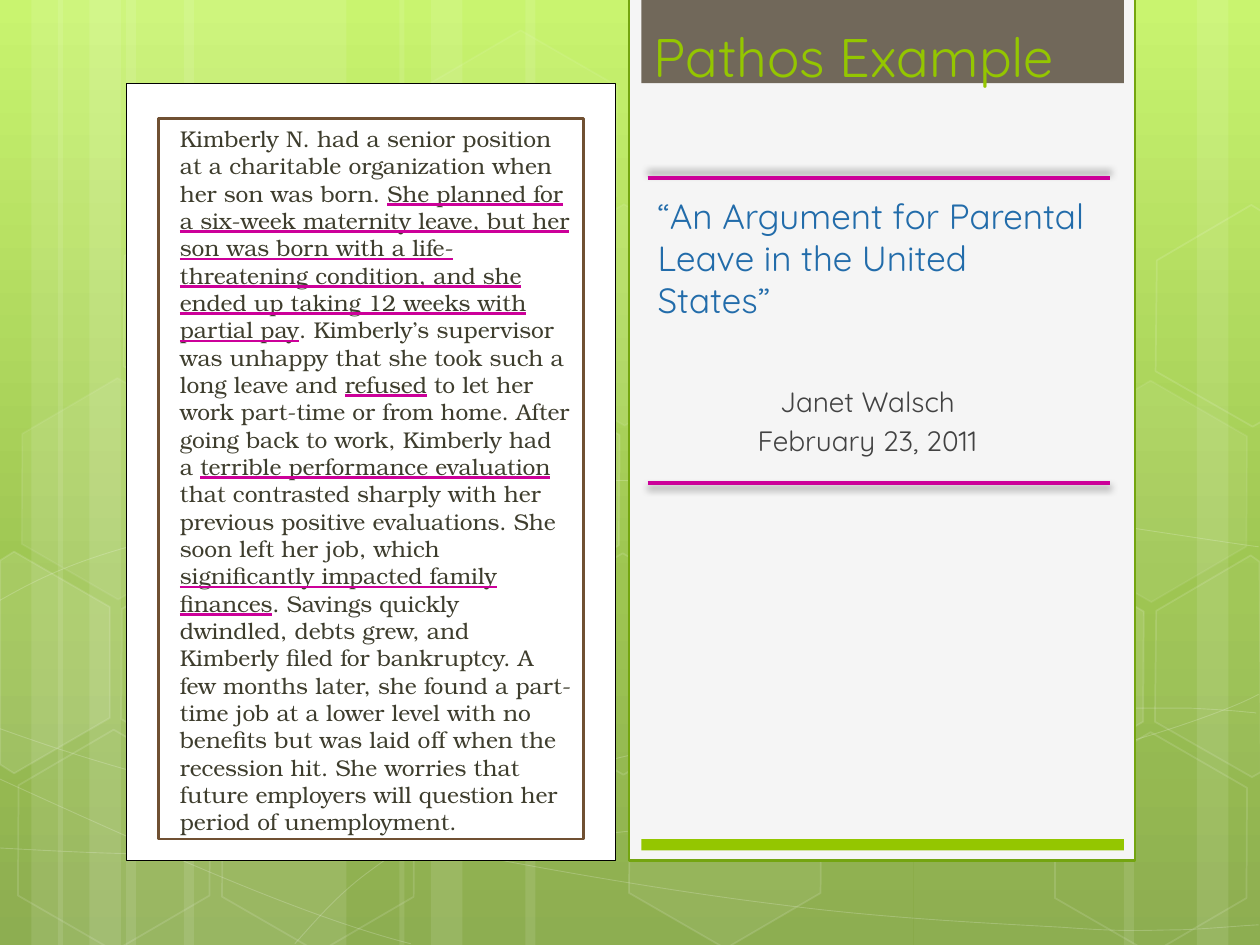
"""Build the Pathos Example slide: a quoted passage beside its source panel."""
import math

from lxml import etree
from pptx import Presentation
from pptx import util as u
from pptx.dml.color import RGBColor
from pptx.enum import shapes, text
from pptx.oxml.ns import qn

COLOURS = {
    "white": "FFFFFF", "black": "000000", "panel": "F5F5F5", "panel edge": "74A510",
    "taupe": "71685A", "lime": "94C600", "brown": "705032", "passage": "3E3D2D",
    "blue": "226CAA", "grey": "424242", "magenta": "CC0099",
}
WIDTH, HEIGHT = 10, 7.5
SERIF, SANS = "TeX Gyre Bonum", "Quicksand"
BACKGROUND = [(0, "C3F35F"), (62, "93BF3F"), (100, "81A53E")]
TILT = 30

STRIPES = [(1, 1.75), (0, 0.5), (0.25, 0.83), (1.46, 1.75), (0.46, 0.5), (0.71, 0.83),
           (7.25, 1.75), (9.5, 0.5), (8.92, 0.83), (4.17, 3.08), (3.17, 0.5), (3.42, 0.83)]

CURVES = [
    [(-0.01, 6.73), (0.53, 6.76), (1.07, 6.79), (1.82, 6.78), (2.57, 6.77), (3.49, 6.75),
     (4.49, 6.65), (5.5, 6.55), (6.92, 6.36), (7.83, 6.17), (8.75, 5.98), (9.68, 5.68), (9.99, 5.51)],
    [(-0.01, 4.77), (0.27, 4.61), (0.56, 4.46), (1.13, 4.31), (1.7, 4.16), (2.5, 3.94),
     (3.39, 3.87), (4.28, 3.8), (5.35, 3.79), (6.45, 3.87), (7.55, 3.95), (9.39, 4.26), (9.99, 4.34)],
    [(-0.03, 6.17), (1.18, 6.72), (2.39, 7.27), (3.26, 7.49)],
    [(-0.01, 5.78), (0.3, 5.89), (0.61, 6), (1.19, 6.16), (1.78, 6.31), (2.65, 6.56),
     (3.48, 6.73), (4.31, 6.9), (5.37, 7.08), (6.19, 7.18), (7.02, 7.29), (7.91, 7.33),
     (8.44, 7.36), (8.97, 7.4), (9.11, 7.38), (9.36, 7.38), (9.62, 7.37), (9.8, 7.35), (9.99, 7.34)],
    [(2.34, 7.49), (2.52, 7.29), (2.69, 7.09), (2.94, 6.91), (3.18, 6.73), (3.51, 6.53),
     (3.79, 6.39), (4.07, 6.25), (4.24, 6.19), (4.61, 6.09), (4.98, 5.99), (5.65, 5.85),
     (6, 5.78), (6.35, 5.71), (6.4, 5.71), (6.71, 5.69), (7.02, 5.66), (7.51, 5.63),
     (7.86, 5.62), (8.2, 5.61), (8.78, 5.62), (8.78, 5.62), (9, 5.62), (9.22, 5.62),
     (9.44, 5.62), (9.63, 5.63), (9.79, 5.64), (9.88, 5.65), (9.97, 5.66), (9.94, 5.65), (9.97, 5.66)],
]

HEXAGONS = [
    (3.28, 3.13, 10, 12), (4.07, 4.51, 0, 12), (4.08, 1.74, 7, 8), (3.26, 0.36, 4, 8),
    (4.88, 5.89, 6, 12), (0.03, 5.91, 0, 12), (0.06, 3.12, 7, 8), (0.85, 4.51, 0, 12),
    (1.65, 5.92, 0, 12), (0.87, 1.71, 0, 12), (7.44, 4.53, 10, 12), (8.26, 5.93, 0, 12),
    (8.26, 3.14, 7, 8),
]
CUT_HEXAGONS = [
    ((0.27, 5.35), [(0, 4.45), (0.11, 4.38), (0.87, 4.82), (0.87, 5.7), (0.11, 6.14), (0, 6.07)], 10),
    ((9.76, 5.2), [(9.18, 4.85), (9.93, 4.41), (10, 4.46), (10.01, 6.13), (9.94, 6.17), (9.17, 5.73)], 4),
    ((9.76, 2.41), [(9.18, 2.07), (9.93, 1.63), (10.01, 1.68), (10.01, 3.35), (9.94, 3.39), (9.17, 2.95)], 0),
]

PANELS = [
    ((4.99, -0.02, 4.02, 6.85), "panel", "panel edge", 1.25),
    ((5.09, -0.02, 3.83, 0.68), "taupe", None, 0),
    ((1, 0.66, 3.88, 6.17), "white", "black", 0.25),
    ((5.09, 6.66, 3.83, 0.09), "lime", None, 0),
    ((1.26, 0.94, 3.37, 5.72), None, "brown", 1.5),
]

PASSAGE = [
    ("Kimberly N. had a senior position at a charitable organization when her son was born. ", False),
    ("She planned for a six-week maternity leave, but her son was born with a life-threatening "
     "condition, and she ended up taking 12 weeks with partial pay", True),
    (". Kimberly’s supervisor was unhappy that she took such a long leave and ", False),
    ("refused", True),
    (" to let her work part-time or from home. After going back to work, Kimberly had a ", False),
    ("terrible performance evaluation ", True),
    ("that contrasted sharply with her previous positive evaluations. She soon left her job, which ", False),
    ("significantly impacted family finances", True),
    (". Savings quickly dwindled, debts grew, and Kimberly filed for bankruptcy. A few months later, "
     "she found a part-time job at a lower level with no benefits but was laid off when the recession "
     "hit. She worries that future employers will question her period of unemployment.", False),
]
LEFT, CENTRE = text.PP_ALIGN.LEFT, text.PP_ALIGN.CENTER
TOP, BOTTOM = text.MSO_ANCHOR.TOP, text.MSO_ANCHOR.BOTTOM
LABELS = [
    ((5.12, 1.26, 3.61, 1.33), ["“An Argument for Parental Leave in the United States”"], 20, "blue", LEFT, BOTTOM),
    ((5.08, 3, 3.61, 1.66), ["Janet Walsch", "February 23, 2011"], 16, "grey", CENTRE, TOP),
    ((5.09, 0, 3.83, 0.75), ["Pathos Example"], 31, "lime", LEFT, BOTTOM),
]
RULES = [(3.83, 90), (1.41, 270)]


def rgb(name):
    return RGBColor.from_string(COLOURS[name])


def add_node(parent, tag, **attributes):
    return etree.SubElement(parent, qn(tag), {key: str(value) for key, value in attributes.items()})


def fade(parent, percent):
    if percent < 100:
        add_node(parent.find(qn("a:solidFill"))[0], "a:alpha", val=percent * 1000)


def style(shape, fill=None, line=None, weight=0, fill_alpha=100, line_alpha=100):
    shape.shadow.inherit = False
    properties = shape.element.spPr
    if fill:
        shape.fill.solid()
        shape.fill.fore_color.rgb = rgb(fill)
        fade(properties, fill_alpha)
    else:
        shape.fill.background()
    if line:
        shape.line.color.rgb = rgb(line)
        shape.line.width = u.Pt(weight)
        fade(properties.find(qn("a:ln")), line_alpha)
    else:
        shape.line.fill.background()


def add_preset(canvas, kind, place, **look):
    shape = canvas.shapes.add_shape(kind, *map(u.Inches, place))
    style(shape, **look)
    return shape


def add_outline(canvas, points, closed, **look):
    points = [(u.Inches(x), u.Inches(y)) for x, y in points]
    builder = canvas.shapes.build_freeform(*points[0], scale=1.0)
    builder.add_line_segments(points[1:], close=closed)
    shape = builder.convert_to_shape()
    style(shape, **look)
    return shape


def bend(shape):
    outline = next(shape.element.iter(qn("a:path")))
    segments = outline.findall(qn("a:lnTo"))
    for start in range(0, len(segments), 3):
        curve = add_node(outline, "a:cubicBezTo")
        for segment in segments[start:start + 3]:
            curve.append(segment[0])
            outline.remove(segment)


def untilt(points, centre):
    cos, sin = math.cos(math.radians(TILT)), math.sin(math.radians(TILT))
    offsets = [(x - centre[0], y - centre[1]) for x, y in points]
    return [(centre[0] + x * cos + y * sin, centre[1] - x * sin + y * cos) for x, y in offsets]


def set_font(para, face, size, colour):
    para.font.name, para.font.size = face, u.Pt(size)
    para.font.color.rgb = rgb(colour)


def draw_backdrop(page):
    fill = page.background.fill
    fill.gradient()
    fill.gradient_angle = 270
    stops = next(page.element.iter(qn("a:gsLst")))
    for stop in list(stops):
        stops.remove(stop)
    for position, colour in BACKGROUND:
        add_node(add_node(stops, "a:gs", pos=position * 1000), "a:srgbClr", val=colour)
    group = page.shapes.add_group_shape()
    for left, width in STRIPES:
        add_preset(group, shapes.MSO_SHAPE.RECTANGLE, (left, 0, width, HEIGHT), fill="white", fill_alpha=10)
    for points in CURVES:
        bend(add_outline(group, points, False, line="white", weight=0.5, line_alpha=20))
    for left, top, tint, edge in HEXAGONS:
        hexagon = add_preset(group, shapes.MSO_SHAPE.HEXAGON, (left, top, 1.75, 1.52), fill=tint and "white",
                             fill_alpha=tint, line="white", weight=1, line_alpha=edge)
        hexagon.adjustments[0] = 0.285
        hexagon.rotation = TILT
    for centre, points, tint in CUT_HEXAGONS:
        cut = add_outline(group, untilt(points, centre), True, fill=tint and "white", fill_alpha=tint,
                          line="white", weight=1, line_alpha=12)
        cut.rotation = TILT


def write_passage(box):
    frame = box.text_frame
    frame.word_wrap, frame.vertical_anchor = True, TOP
    para = frame.paragraphs[0]
    para.alignment = LEFT
    set_font(para, SERIF, 13, "passage")
    next(box.element.iter(qn("a:pPr"))).set("marL", str(u.Inches(0.07)))
    for words, underlined in PASSAGE:
        span = para.add_run()
        span.text = words
        if underlined:
            span.font.underline = text.MSO_UNDERLINE.HEAVY_LINE
    for properties in box.element.iter(qn("a:rPr")):
        if properties.get("u"):
            line_fill = add_node(properties, "a:uFill")
            add_node(add_node(line_fill, "a:solidFill"), "a:srgbClr", val=COLOURS["magenta"])


def add_label(page, place, lines, size, colour, align, anchor):
    frame = page.shapes.add_textbox(*map(u.Inches, place)).text_frame
    frame.word_wrap, frame.vertical_anchor = True, anchor
    for index, words in enumerate(lines):
        para = frame.add_paragraph() if index else frame.paragraphs[0]
        para.text, para.alignment = words, align
        para.space_before = u.Pt(size * 0.2 if index else 0)
        set_font(para, SANS, size, colour)


def add_rule(page, top, direction):
    ends = map(u.Inches, (5.14, top, 8.81, top))
    rule = page.shapes.add_connector(shapes.MSO_CONNECTOR.STRAIGHT, *ends)
    rule.line.color.rgb, rule.line.width = rgb("magenta"), u.Pt(2.25)
    effects = add_node(rule.element.spPr, "a:effectLst")
    shadow = add_node(effects, "a:outerShdw", blurRad=u.Pt(4), dist=u.Pt(3), dir=direction * 60000)
    add_node(add_node(shadow, "a:srgbClr", val=COLOURS["black"]), "a:alpha", val=40000)


def main():
    deck = Presentation()
    deck.slide_width, deck.slide_height = u.Inches(WIDTH), u.Inches(HEIGHT)
    page = deck.slides.add_slide(deck.slide_layouts[6])
    draw_backdrop(page)
    boxes = [add_preset(page, shapes.MSO_SHAPE.RECTANGLE, place, fill=fill, line=line, weight=weight)
             for place, fill, line, weight in PANELS]
    write_passage(boxes[-1])
    for label in LABELS:
        add_label(page, *label)
    for rule in RULES:
        add_rule(page, *rule)
    deck.save("out.pptx")


if __name__ == "__main__":
    main()
